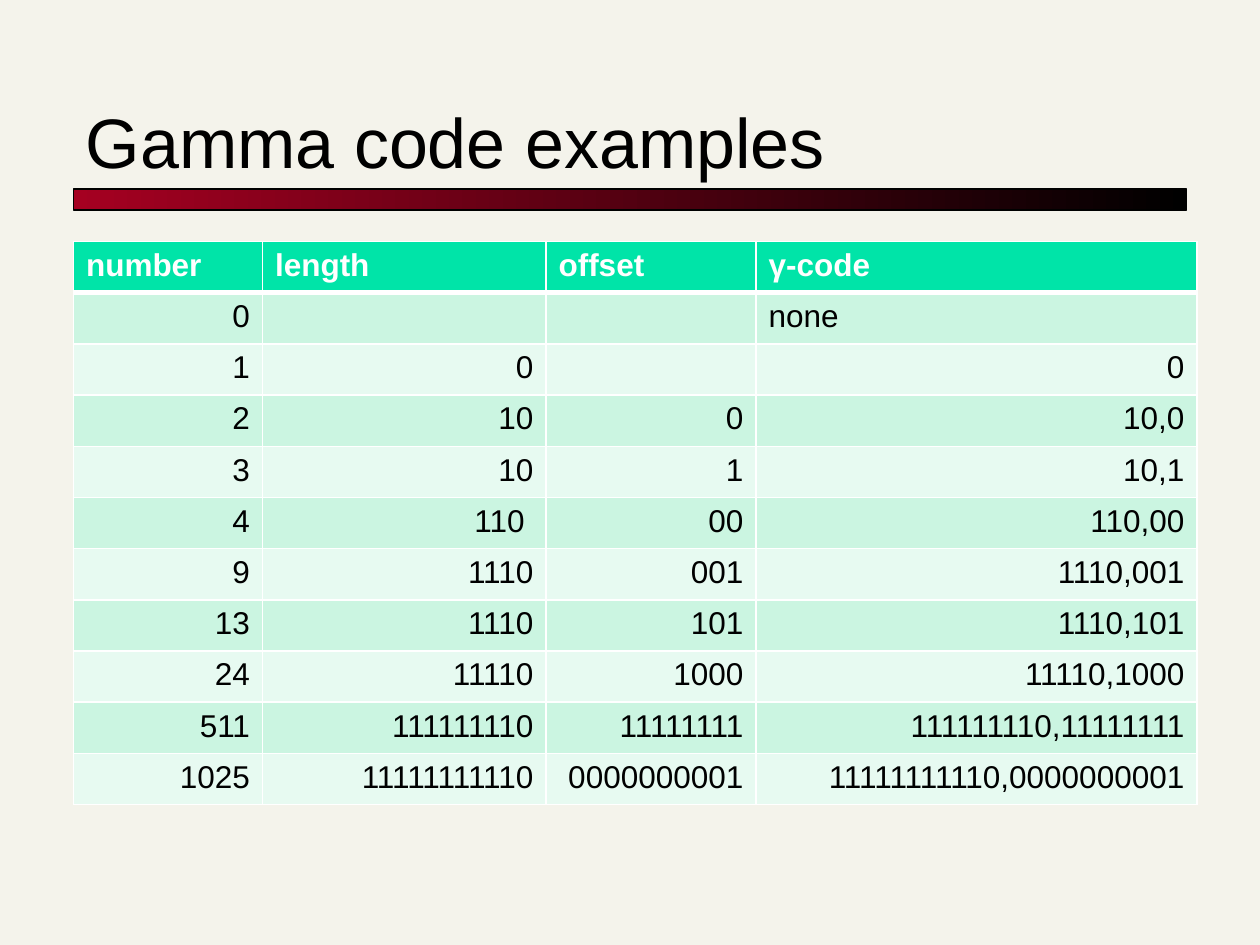
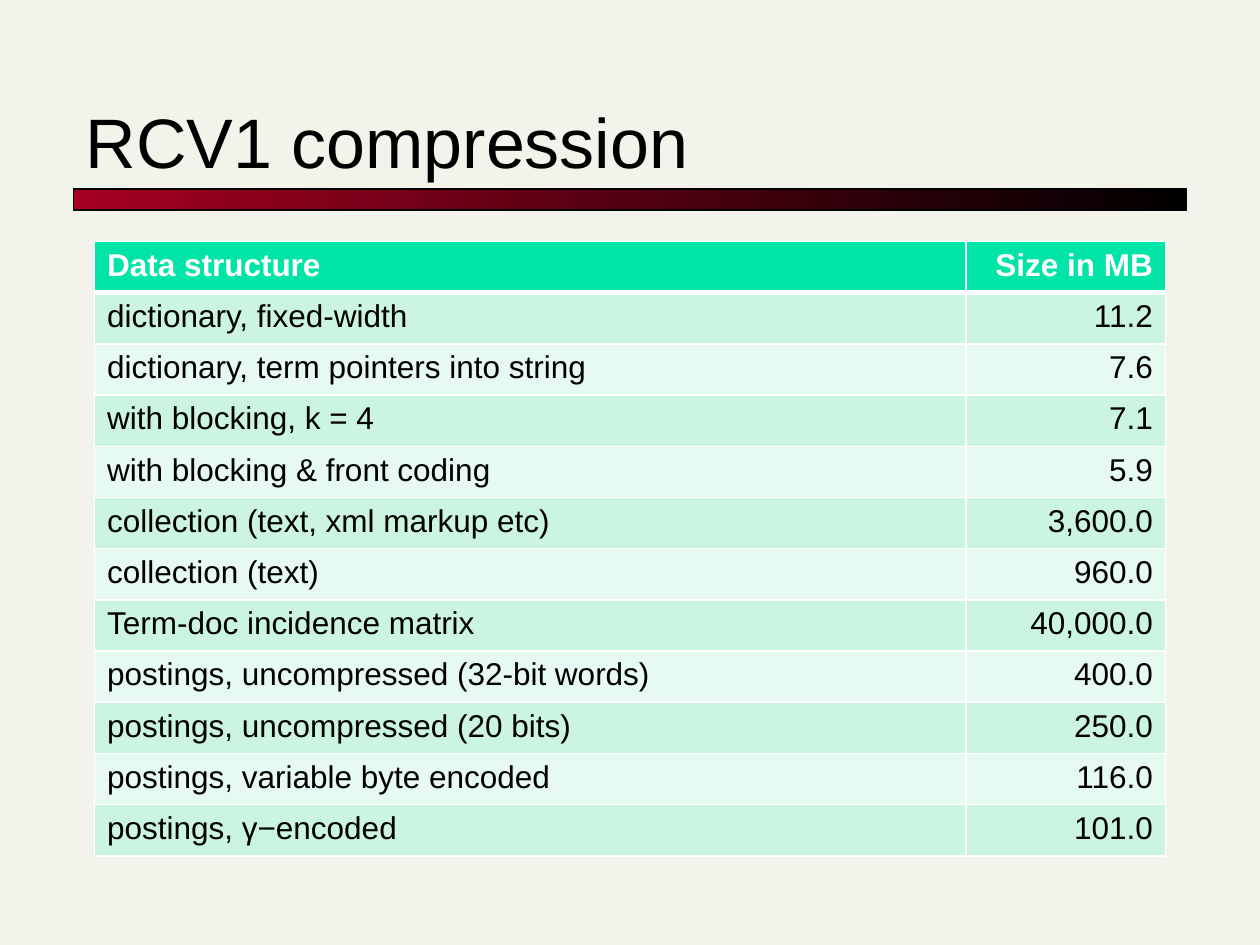
"""Build two slides of index compression tables."""
from dataclasses import dataclass

from lxml import etree
from pptx import Presentation, util as u
from pptx.dml.color import RGBColor
from pptx.enum import shapes, text
from pptx.oxml import ns

SLIDE_WIDTH, SLIDE_HEIGHT = u.Inches(10), u.Inches(7.5)
GRID_COLUMNS, GRID_ROWS = 120, 90
TABLE_TOP, TABLE_ROW = 23, 4.88

FONT = "Arial"
CREAM = RGBColor(0xF4, 0xF3, 0xEB)
CRIMSON = RGBColor(0xA5, 0x00, 0x21)
BLACK = RGBColor(0x00, 0x00, 0x00)
WHITE = RGBColor(0xFF, 0xFF, 0xFF)
HEADER_GREEN = RGBColor(0x00, 0xE4, 0xA8)
BAND_GREENS = (RGBColor(0xE7, 0xFA, 0xF1), RGBColor(0xCB, 0xF5, 0xE1))

LEFT, RIGHT = text.PP_ALIGN.LEFT, text.PP_ALIGN.RIGHT


@dataclass(frozen=True)
class Box:
    """A place on the slide in grid columns and rows."""
    left: float
    top: float
    width: float
    height: float

    def lengths(self) -> tuple:
        """Return left, top, width and height as lengths."""
        return across(self.left), down(self.top), across(self.width), down(self.height)


@dataclass(frozen=True)
class TableSlide:
    """A titled slide with one table."""
    title: str
    left: float
    column_widths: tuple
    header: tuple
    header_alignments: tuple
    rows: tuple


TITLE_BOX = Box(7, 5, 106, 13)
BAND_BOX = Box(7, 18, 106, 2)

GAMMA_CODES = TableSlide(
    "Gamma code examples", 7, (18, 27, 20, 42),
    ("number", "length", "offset", "γ-code"), (LEFT,) * 4,
    (
        ("0", "", "", "none"),
        ("1", "0", "", "0"),
        ("2", "10", "0", "10,0"),
        ("3", "10", "1", "10,1"),
        ("4", "110 ", "00", "110,00"),
        ("9", "1110", "001", "1110,001"),
        ("13", "1110", "101", "1110,101"),
        ("24", "11110", "1000", "11110,1000"),
        ("511", "111111110", "11111111", "111111110,11111111"),
        ("1025", "11111111110", "0000000001", "11111111110,0000000001"),
    ),
)

RCV1_SIZES = TableSlide(
    "RCV1 compression", 9, (83, 19),
    ("Data structure", "Size in MB"), (LEFT, RIGHT),
    (
        ("dictionary, fixed-width", "11.2"),
        ("dictionary, term pointers into string", "7.6"),
        ("with blocking, k = 4", "7.1"),
        ("with blocking & front coding", "5.9"),
        ("collection (text, xml markup etc)", "3,600.0"),
        ("collection (text)", "960.0"),
        ("Term-doc incidence matrix", "40,000.0"),
        ("postings, uncompressed (32-bit words)", "400.0"),
        ("postings, uncompressed (20 bits)", "250.0"),
        ("postings, variable byte encoded", "116.0"),
        ("postings, γ−encoded", "101.0"),
    ),
)


def across(columns: float) -> int:
    """Turn grid columns into a length."""
    return round(SLIDE_WIDTH * columns / GRID_COLUMNS)


def down(rows: float) -> int:
    """Turn grid rows into a length."""
    return round(SLIDE_HEIGHT * rows / GRID_ROWS)


def format_runs(paragraph, size: float, color: RGBColor, bold: bool = False) -> None:
    """Give every run of a paragraph the same font."""
    for run in paragraph.runs:
        run.font.name, run.font.size, run.font.bold = FONT, u.Pt(size), bold
        run.font.color.rgb = color


def draw_band(slide) -> None:
    """Draw the gradient band under the title."""
    band = slide.shapes.add_shape(shapes.MSO_SHAPE.RECTANGLE, *BAND_BOX.lengths())
    band.shadow.inherit = False
    band.fill.gradient()
    band.fill.gradient_angle = 0
    for stop, color, position in zip(band.fill.gradient_stops, (CRIMSON, BLACK), (0, 1)):
        stop.color.rgb, stop.position = color, position
    band.line.color.rgb, band.line.width = BLACK, u.Pt(0.75)


def draw_title(slide, title: str) -> None:
    """Write the title, resting on the band."""
    text_frame = slide.shapes.add_textbox(*TITLE_BOX.lengths()).text_frame
    text_frame.word_wrap = True
    text_frame.vertical_anchor = text.MSO_ANCHOR.BOTTOM
    text_frame.text = title
    format_runs(text_frame.paragraphs[0], 40, BLACK)


def draw_borders(cell, row_number: int) -> None:
    """Draw white cell borders, thicker between header and body."""
    widths = {"L": 1, "R": 1, "T": 3 if row_number == 1 else 1, "B": 3 if row_number == 0 else 1}
    properties = cell._tc.get_or_add_tcPr()
    for side, width in widths.items():
        line = etree.SubElement(properties, ns.qn(f"a:ln{side}"), w=str(u.Pt(width)))
        fill = etree.SubElement(line, ns.qn("a:solidFill"))
        etree.SubElement(fill, ns.qn("a:srgbClr"), val=str(WHITE))


def draw_cell(cell, value: str, row_number: int, alignment) -> None:
    """Fill, border and write one cell."""
    is_header = row_number == 0
    draw_borders(cell, row_number)
    cell.fill.solid()
    cell.fill.fore_color.rgb = HEADER_GREEN if is_header else BAND_GREENS[row_number % 2]
    cell.text_frame.text = value
    paragraph = cell.text_frame.paragraphs[0]
    paragraph.alignment = alignment
    format_runs(paragraph, 18, WHITE if is_header else BLACK, is_header)


def draw_table(slide, content: TableSlide) -> None:
    """Draw the table with its header and banded rows."""
    rows = (content.header, *content.rows)
    box = Box(content.left, TABLE_TOP, sum(content.column_widths), TABLE_ROW * len(rows))
    table = slide.shapes.add_table(len(rows), len(content.header), *box.lengths()).table
    for column, width in zip(table.columns, content.column_widths):
        column.width = across(width)
    for row_number, values in enumerate(rows):
        table.rows[row_number].height = down(TABLE_ROW)
        for column_number, value in enumerate(values):
            if row_number == 0:
                alignment = content.header_alignments[column_number]
            else:
                alignment = RIGHT if value[:1].isdigit() else LEFT
            draw_cell(table.cell(row_number, column_number), value, row_number, alignment)


def add_table_slide(presentation, content: TableSlide) -> None:
    """Add one slide with background, band, title and table."""
    slide = presentation.slides.add_slide(presentation.slide_layouts[6])
    slide.background.fill.solid()
    slide.background.fill.fore_color.rgb = CREAM
    draw_band(slide)
    draw_title(slide, content.title)
    draw_table(slide, content)


def main() -> None:
    """Build and save the presentation."""
    presentation = Presentation()
    presentation.slide_width, presentation.slide_height = SLIDE_WIDTH, SLIDE_HEIGHT
    for content in (GAMMA_CODES, RCV1_SIZES):
        add_table_slide(presentation, content)
    presentation.save("out.pptx")


if __name__ == "__main__":
    main()
